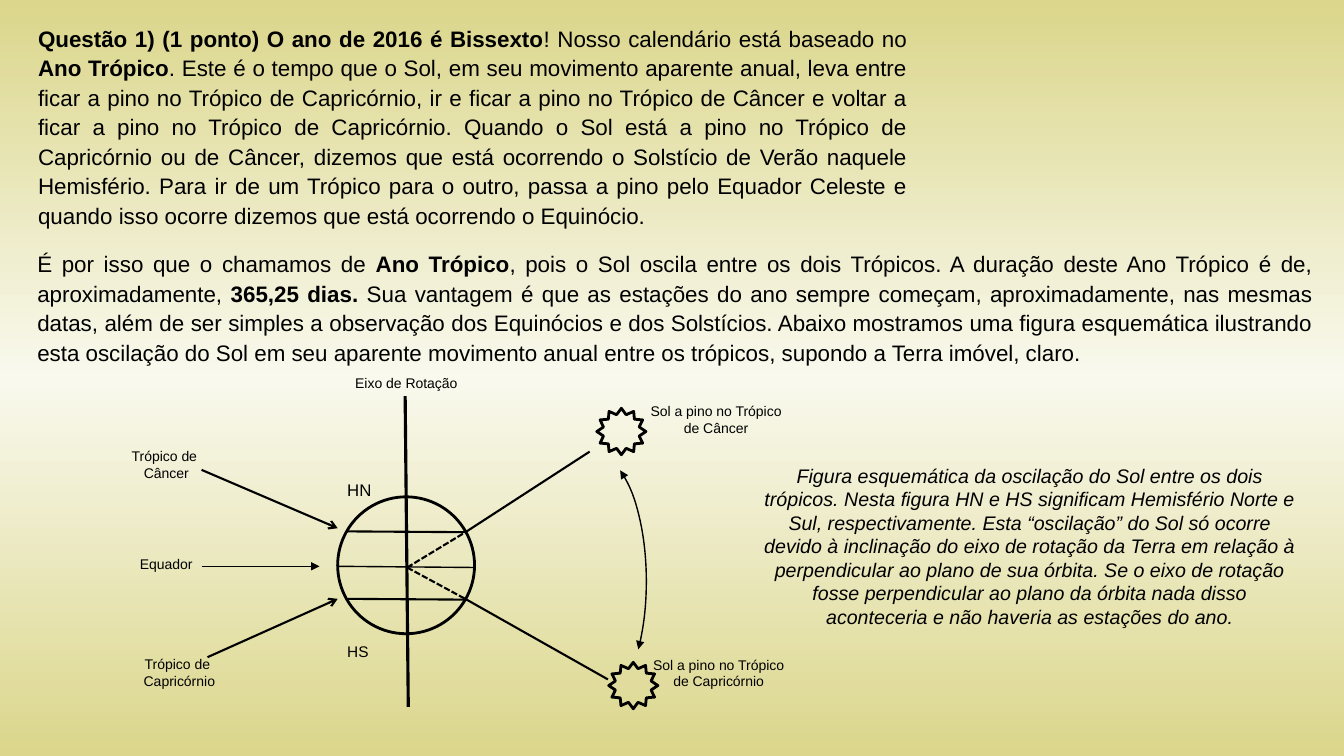
from copy import deepcopy
from dataclasses import dataclass

from pptx import Presentation
from pptx.dml.color import RGBColor
from pptx.enum.dml import MSO_LINE_DASH_STYLE as Dash
from pptx.enum.shapes import MSO_CONNECTOR as Connector, MSO_SHAPE as Shape
from pptx.enum.text import MSO_ANCHOR as Anchor, PP_ALIGN as Align
from pptx.oxml.ns import qn
from pptx.util import Cm, Pt
from lxml.etree import SubElement


@dataclass(frozen=True)
class Theme:
    font: str = "Arial"
    ink: RGBColor = RGBColor(0, 0, 0)
    edge: RGBColor = RGBColor(0xDB, 0xD6, 0x8B)
    middle: RGBColor = RGBColor(0xF9, 0xF9, 0xEE)
    body: int = 16
    caption: int = 14
    north: int = 12
    south: int = 11
    label: int = 10


THEME = Theme()

QUESTION = [
    ("Questão 1) (1 ponto) O ano de 2016 é Bissexto", True),
    ("! Nosso calendário está baseado no ", False),
    ("Ano Trópico", True),
    (". Este é o tempo que o Sol, em seu movimento aparente anual, leva entre ficar a pino no "
     "Trópico de Capricórnio, ir e ficar a pino no Trópico de Câncer e voltar a ficar a pino no "
     "Trópico de Capricórnio. Quando o Sol está a pino no Trópico de Capricórnio ou de Câncer, "
     "dizemos que está ocorrendo o Solstício de Verão naquele Hemisfério. Para ir de um Trópico "
     "para o outro, passa a pino pelo Equador Celeste e quando isso ocorre dizemos que está "
     "ocorrendo o Equinócio.", False),
]
EXPLANATION = [
    ("É por isso que o chamamos de ", False),
    ("Ano Trópico", True),
    (", pois o Sol oscila entre os dois Trópicos. A duração deste Ano Trópico é de, "
     "aproximadamente, ", False),
    ("365,25 dias. ", True),
    ("Sua vantagem é que as estações do ano sempre começam, aproximadamente, nas mesmas datas, "
     "além de ser simples a observação dos Equinócios e dos Solstícios. Abaixo mostramos uma "
     "figura esquemática ilustrando esta oscilação do Sol em seu aparente movimento anual entre "
     "os trópicos, supondo a Terra imóvel, claro.", False),
]
CAPTION = (
    "Figura esquemática da oscilação do Sol entre os dois trópicos. Nesta figura HN e HS "
    "significam Hemisfério Norte e Sul, respectivamente. Esta “oscilação” do Sol só ocorre "
    "devido à inclinação do eixo de rotação da Terra em relação à perpendicular ao plano de sua "
    "órbita. Se o eixo de rotação fosse perpendicular ao plano da órbita nada disso aconteceria "
    "e não haveria as estações do ano.")


def style_font(font, size):
    font.name, font.size, font.color.rgb = THEME.font, Pt(size), THEME.ink


def add_text(shapes, box, text, size, align=Align.CENTER, anchor=Anchor.TOP):
    text_box = shapes.add_textbox(*map(Cm, box))
    frame = text_box.text_frame
    frame.word_wrap, frame.vertical_anchor = True, anchor
    frame.text = text
    for para in frame.paragraphs:
        para.alignment = align
        for span in para.runs:
            style_font(span.font, size)
    return frame


def add_body(page, box, pieces):
    """Justified paragraph with bold passages."""
    para = add_text(page.shapes, box, "", THEME.body, Align.JUSTIFY).paragraphs[0]
    para.line_spacing = 1.1
    for text, bold in pieces:
        span = para.add_run()
        span.text = text
        style_font(span.font, THEME.body)
        span.font.bold = bold


def add_caption(page, box):
    frame = add_text(page.shapes, box, CAPTION, THEME.caption)
    frame.paragraphs[0].runs[0].font.italic = True


def add_outline(shapes, kind, box, width):
    shape = shapes.add_shape(kind, *map(Cm, box))
    shape.shadow.inherit = False
    shape.fill.background()
    shape.line.color.rgb, shape.line.width = THEME.ink, Pt(width)
    return shape


def add_arrowhead(shape, end, kind):
    SubElement(shape.line._get_or_add_ln(), qn(f"a:{end}"), type=kind)


def add_line(shapes, start, end, width=1.5, dash=None, tail=None):
    line = shapes.add_connector(Connector.STRAIGHT, *map(Cm, (*start, *end)))
    SubElement(line._element.spPr, qn("a:effectLst"))
    line.line.color.rgb, line.line.width = THEME.ink, Pt(width)
    if dash:
        line.line.dash_style = dash
    if tail:
        add_arrowhead(line, "tailEnd", tail)


def add_diagram(page, box):
    """Earth, tropics and the two extreme positions of the Sun."""
    left, top = box
    shapes = page.shapes.add_group_shape().shapes

    def at(x, y):
        return left + x, top + y

    # Globe, axis and parallels
    add_outline(shapes, Shape.OVAL, (*at(6.51, 3.22), 3.45, 3.45), 2)
    centre, cancer, capricorn = at(8.26, 5), at(9.73, 4.11), at(9.76, 5.81)
    add_line(shapes, at(8.21, 0.68), at(8.29, 8.51), 2.25)
    add_line(shapes, at(6.51, 4.97), at(9.99, 5), 1)
    add_line(shapes, at(6.74, 4.09), cancer)
    add_line(shapes, at(6.76, 5.79), capricorn)

    # Sun rays, dashed inside the globe
    for tropic, ray_end in ((cancer, at(12.86, 2.08)), (capricorn, at(13.32, 7.82))):
        add_line(shapes, centre, tropic, dash=Dash.SQUARE_DOT)
        add_line(shapes, tropic, ray_end)

    # Suns and the swing between them
    for corner in (at(13.04, 0.99), at(13.34, 7.39)):
        add_outline(shapes, Shape.STAR_12_POINT, (*corner, 1.24, 1.17), 2)
    swing = add_outline(shapes, Shape.ARC, (*at(11.67, 2.13), 2.62, 6.43), 1)
    for index, degrees in enumerate((283.1, 57.2)):
        swing.adjustments[index] = degrees * 0.6
    for end in ("headEnd", "tailEnd"):
        add_arrowhead(swing, end, "triangle")

    # Pointers to the parallels
    add_line(shapes, at(3.08, 2.54), at(6.51, 4.01), tail="arrow")
    add_line(shapes, at(3.08, 4.97), at(6.05, 4.97), 1, tail="triangle")
    add_line(shapes, at(3.23, 7.26), at(6.51, 5.79), tail="arrow")

    # Labels
    for x, y, text in ((-0.07, 1.5, "Trópico de \nCâncer"), (-0.07, 4.01, "Equador"),
                       (0.26, 6.75, "Trópico de \nCapricórnio")):
        add_text(shapes, (*at(x, y), 4.52, 1.8), text, THEME.label, anchor=Anchor.MIDDLE)
    for x, y, width, text in ((5.98, 0.02, 4.52, "Eixo de Rotação"),
                              (13.29, 0.73, 5.51, "Sol a pino no Trópico\nde Câncer"),
                              (13.29, 7.11, 5.64, "Sol a pino no Trópico\nde Capricórnio")):
        add_text(shapes, (*at(x, y), width, 1.8), text, THEME.label)
    for y, text, size in ((2.66, "HN", THEME.north), (6.75, "HS", THEME.south)):
        add_text(shapes, (*at(6.5, y), 1.9, 1.07), text, size, Align.LEFT)


def paint_background(page):
    fill = page.background.fill
    fill.gradient()
    fill.gradient_angle = 270
    stop_list = page.element.find(".//" + qn("a:gsLst"))
    stop_list.insert(1, deepcopy(stop_list[0]))
    colors = (THEME.edge, THEME.middle, THEME.edge)
    for stop, color, position in zip(fill.gradient_stops, colors, (0, 0.5, 1)):
        stop.color.rgb, stop.position = color, position


def main():
    deck = Presentation()
    deck.slide_width, deck.slide_height = Cm(33.87), Cm(19.05)
    page = deck.slides.add_slide(deck.slide_layouts[6])
    paint_background(page)
    add_body(page, (0.71, 0.43, 22.4, 5.46), QUESTION)
    add_body(page, (0.69, 6.12, 32.64, 3.23), EXPLANATION)
    add_diagram(page, (2, 9.3))
    add_caption(page, (18.97, 11.56, 13.97, 4.45))
    deck.save("out.pptx")


if __name__ == "__main__":
    main()
